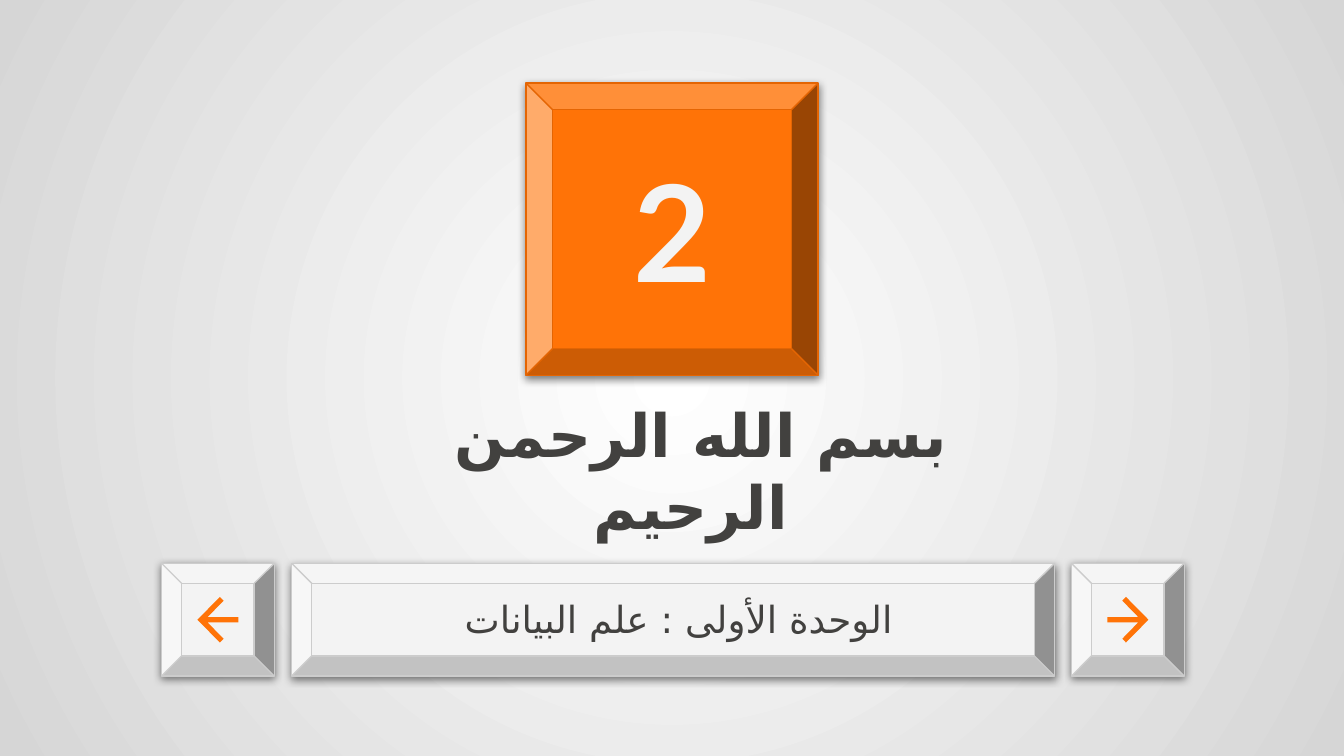
from lxml import etree
from pptx import Presentation
from pptx.dml.color import RGBColor
from pptx.enum import shapes, text
from pptx.oxml import ns, parse_xml
from pptx.util import Pt

COLORS = {
    "orange": "FF7307", "orange_edge": "E46503",
    "light": "F3F3F3", "light_edge": "CCCCCC",
    "dark": "42413F", "center": "FFFFFF", "rim": "D6D6D6",
}
ARABIC_FONT = "DejaVu Sans"

# words, (left, top, width, height), font, size, bold, colour, right-to-left
TEXTS = [
    ("بسم الله الرحمن الرحيم ", (186, 204.5, 379, 94.5), "Roboto", 32, True, "dark", False),
    ("الوحدة الأولى : علم البيانات ", (186, 314, 349, 34.5), "Calibri", 20, False, "dark", True),
    ("2", (298, 69.25, 124.5, 106.5), "Lato", 72, True, "light", False),
]

TILE = (281.75, 44.5, 156.5, 156.5)
BAR_TOP, BUTTON = 301.75, 60.5
BAR_LEFT, BAR_WIDTH = 156.25, 408.75
# left edge and arrow rotation of each navigation button
BUTTONS = [(574, 0), (86.5, 180)]

ARROW_SIZE = (22, 24.4)
ARROW = [(10, 0), (8, 2), (16.6, 10.8), (0, 10.8), (0, 13.6),
         (16.6, 13.6), (8, 22.4), (10, 24.4), (22, 12.2)]

SHADOW = (
    f'<a:effectLst {ns.nsdecls("a")}>'
    f'<a:outerShdw blurRad="{Pt(4.5)}" dist="{Pt(1.5)}" dir="5400000" algn="bl" rotWithShape="0">'
    '<a:srgbClr val="000000"><a:alpha val="50000"/></a:srgbClr>'
    '</a:outerShdw></a:effectLst>'
)


def rgb(name):
    return RGBColor.from_string(COLORS[name])


def paint_background(page):
    fill = page.background.fill
    fill.gradient()
    for stop, name in zip(fill.gradient_stops, ("center", "rim")):
        stop.color.rgb = rgb(name)
    gradient = page.background._cSld.find(".//" + ns.qn("a:gradFill"))
    gradient.remove(gradient.find(ns.qn("a:lin")))
    circle = etree.SubElement(gradient, ns.qn("a:path"), {"path": "circle"})
    etree.SubElement(circle, ns.qn("a:fillToRect"),
                     {side: "50000" for side in "ltrb"})


def add_bevel(parent, place, depth, name):
    bevel = parent.add_shape(shapes.MSO_SHAPE.BEVEL, *map(Pt, place))
    bevel.adjustments[0] = depth
    bevel.fill.solid()
    bevel.fill.fore_color.rgb = rgb(name)
    bevel.line.color.rgb = rgb(name + "_edge")
    bevel.line.width = Pt(0.75)
    bevel._element.spPr.append(parse_xml(SHADOW))


def add_button(page, left, rotation):
    group = page.shapes.add_group_shape().shapes
    add_bevel(group, (left, BAR_TOP, BUTTON, BUTTON), 0.179, "light")
    points = [(Pt(x), Pt(y)) for x, y in ARROW]
    outline = group.build_freeform(*points[0])
    outline.add_line_segments(points[1:], close=True)
    arrow_left, arrow_top = (start + (BUTTON - size) / 2 for start, size
                             in zip((left, BAR_TOP), ARROW_SIZE))
    arrow = outline.convert_to_shape(Pt(arrow_left), Pt(arrow_top))
    arrow.rotation = rotation
    arrow.shadow.inherit = False
    arrow.fill.solid()
    arrow.fill.fore_color.rgb = rgb("orange")
    arrow.line.fill.background()


def add_text(page, words, place, font, size, bold, color, rtl):
    frame = page.shapes.add_textbox(*map(Pt, place)).text_frame
    frame.word_wrap = True
    frame.vertical_anchor = text.MSO_ANCHOR.MIDDLE
    frame.margin_left = frame.margin_right = Pt(7.2)
    frame.margin_top = frame.margin_bottom = Pt(7.2)
    para = frame.paragraphs[0]
    para.alignment = text.PP_ALIGN.CENTER
    para.font.name, para.font.size, para.font.bold = font, Pt(size), bold
    para.font.color.rgb = rgb(color)
    if rtl:
        para._p.get_or_add_pPr().set("rtl", "1")
    span = para.add_run()
    span.text = words
    etree.SubElement(span._r.get_or_add_rPr(), ns.qn("a:cs"), typeface=ARABIC_FONT)


def main():
    deck = Presentation()
    deck.slide_width, deck.slide_height = Pt(720), Pt(405)
    page = deck.slides.add_slide(deck.slide_layouts[6])
    paint_background(page)
    add_bevel(page.shapes, TILE, 0.091, "orange")
    add_bevel(page.shapes, (BAR_LEFT, BAR_TOP, BAR_WIDTH, BUTTON), 0.179, "light")
    for item in TEXTS:
        add_text(page, *item)
    for left, rotation in BUTTONS:
        add_button(page, left, rotation)
    deck.save("out.pptx")


if __name__ == "__main__":
    main()
